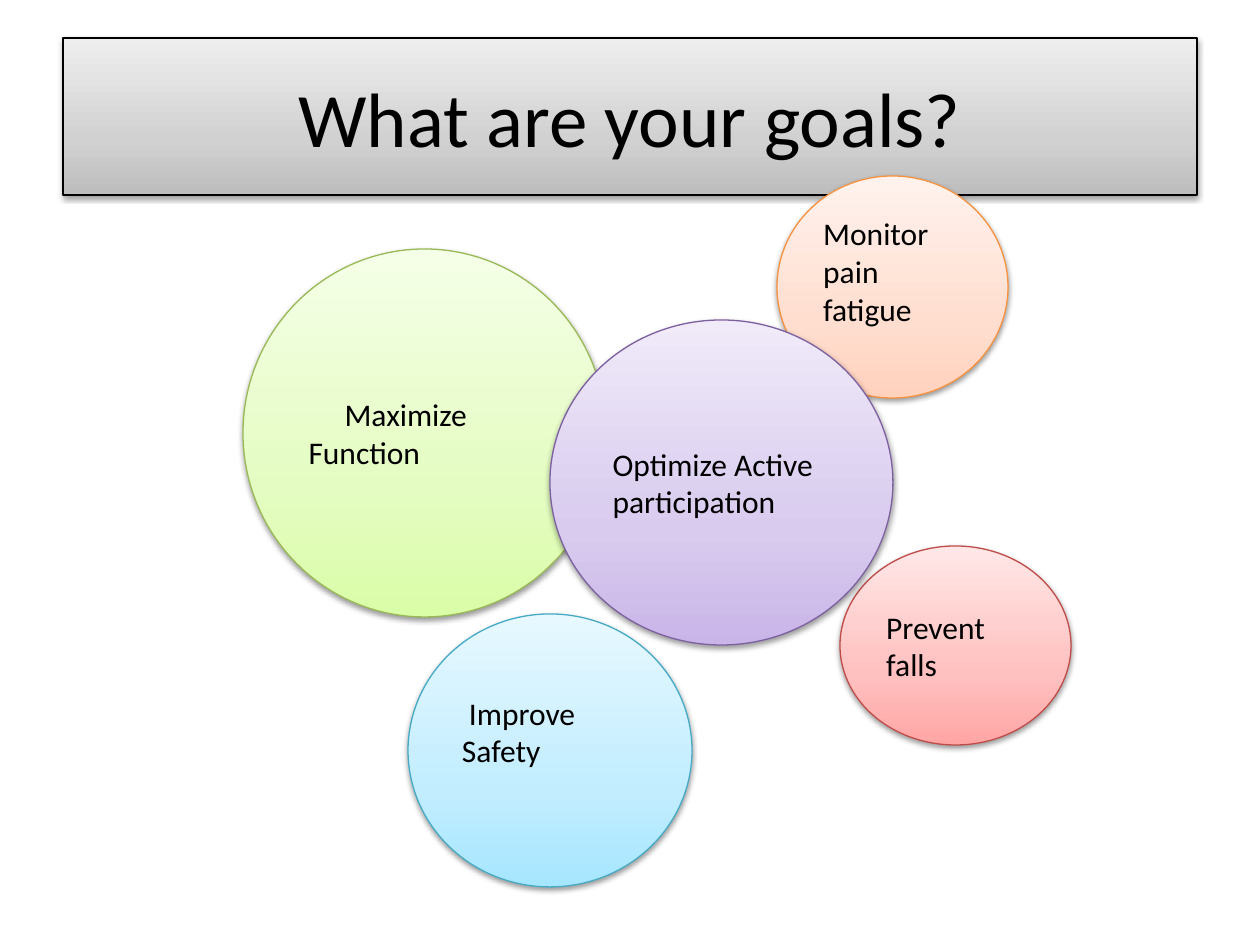
"""Build a slide of overlapping goal bubbles under a shaded title bar."""
from copy import deepcopy
from dataclasses import dataclass

from lxml.etree import SubElement
from pptx import Presentation
from pptx.dml.color import RGBColor
from pptx.enum.shapes import MSO_SHAPE
from pptx.enum.text import MSO_ANCHOR, PP_ALIGN
from pptx.oxml.ns import qn
from pptx.util import Emu, Pt

PX_PER_INCH = 126
COLORS = {
    "black": "000000",
    "gray": ("BDBDBD", "D1D1D1", "EEEEEE"), "gray_line": "000000",
    "green": ("DAFDA7", "E4FCC2", "F5FFE7"), "green_line": "98B955",
    "blue": ("A7E6FF", "C1EDFF", "E7F8FF"), "blue_line": "46AAC5",
    "red": ("FFA6A5", "FFC0BF", "FFE7E7"), "red_line": "BF4C48",
    "orange": ("FFD2BD", "FFDED0", "FFF2ED"), "orange_line": "F69240",
    "purple": ("C9B5E8", "D8CBEE", "F0EAF9"), "purple_line": "7D60A0",
}
STOPS = (0, 0.35, 1)


@dataclass
class Panel:
    text: str
    color: str
    left: int
    top: int
    width: int
    height: int
    shape: MSO_SHAPE = MSO_SHAPE.OVAL
    size: int = 18
    align: PP_ALIGN = PP_ALIGN.LEFT
    indent: int = 0
    inset_top: int = 6
    inset_bottom: int = 6


PANELS = [
    Panel("What are your goals?", "gray", 63, 38, 1134, 157,
          shape=MSO_SHAPE.RECTANGLE, size=44, align=PP_ALIGN.CENTER),
    Panel("Maximize\vFunction", "green", 243, 249, 363, 368, indent=36),
    Panel("Improve\vSafety", "blue", 408, 614, 284, 273, indent=7, inset_bottom=44),
    Panel("Prevent falls", "red", 840, 546, 231, 199),
    Panel("Monitor\npain\vfatigue", "orange", 777, 176, 231, 222,
          inset_top=0, inset_bottom=32),
    Panel("Optimize Active participation", "purple", 550, 320, 343, 325),
]


def px(n: int) -> Emu:
    return Emu(round(n * 914400 / PX_PER_INCH))


def rgb(value: str) -> RGBColor:
    return RGBColor.from_string(value)


def set_gradient(sp, colors: tuple) -> None:
    fill = sp.fill
    fill.gradient()
    fill.gradient_angle = 90
    stops = sp._element.spPr.find(qn("a:gradFill")).find(qn("a:gsLst"))
    stops.append(deepcopy(stops[-1]))
    for stop, position, color in zip(fill.gradient_stops, STOPS, colors):
        stop.position = position
        stop.color.rgb = rgb(color)


def add_shadow(sp) -> None:
    sp.shadow.inherit = False
    effects = sp._element.spPr.find(qn("a:effectLst"))
    shadow = SubElement(effects, qn("a:outerShdw"), blurRad="40000", dist="20000",
                        dir="5400000", rotWithShape="0")
    color = SubElement(shadow, qn("a:srgbClr"), val=COLORS["black"])
    SubElement(color, qn("a:alpha"), val="38000")


def write_text(tf, text: str, *, size: int, align: PP_ALIGN, indent: int) -> None:
    tf.text = text
    for p in tf.paragraphs:
        p.alignment = align
        p._p.get_or_add_pPr().set("indent", str(px(indent)))
        for r in p.runs:
            r.font.name = "Calibri"
            r.font.size = Pt(size)
            r.font.color.rgb = rgb(COLORS["black"])


def add_panel(s, panel: Panel) -> None:
    sp = s.shapes.add_shape(panel.shape, px(panel.left), px(panel.top),
                            px(panel.width), px(panel.height))
    set_gradient(sp, COLORS[panel.color])
    sp.line.color.rgb = rgb(COLORS[f"{panel.color}_line"])
    sp.line.width = Pt(0.75)
    add_shadow(sp)
    tf = sp.text_frame
    tf.word_wrap = True
    tf.vertical_anchor = MSO_ANCHOR.MIDDLE
    tf.margin_top = px(panel.inset_top)
    tf.margin_bottom = px(panel.inset_bottom)
    write_text(tf, panel.text, size=panel.size, align=panel.align, indent=panel.indent)


def main() -> None:
    prs = Presentation()
    prs.slide_width, prs.slide_height = px(1260), px(945)
    s = prs.slides.add_slide(prs.slide_layouts[6])
    for panel in PANELS:
        add_panel(s, panel)
    prs.save("out.pptx")


if __name__ == "__main__":
    main()
